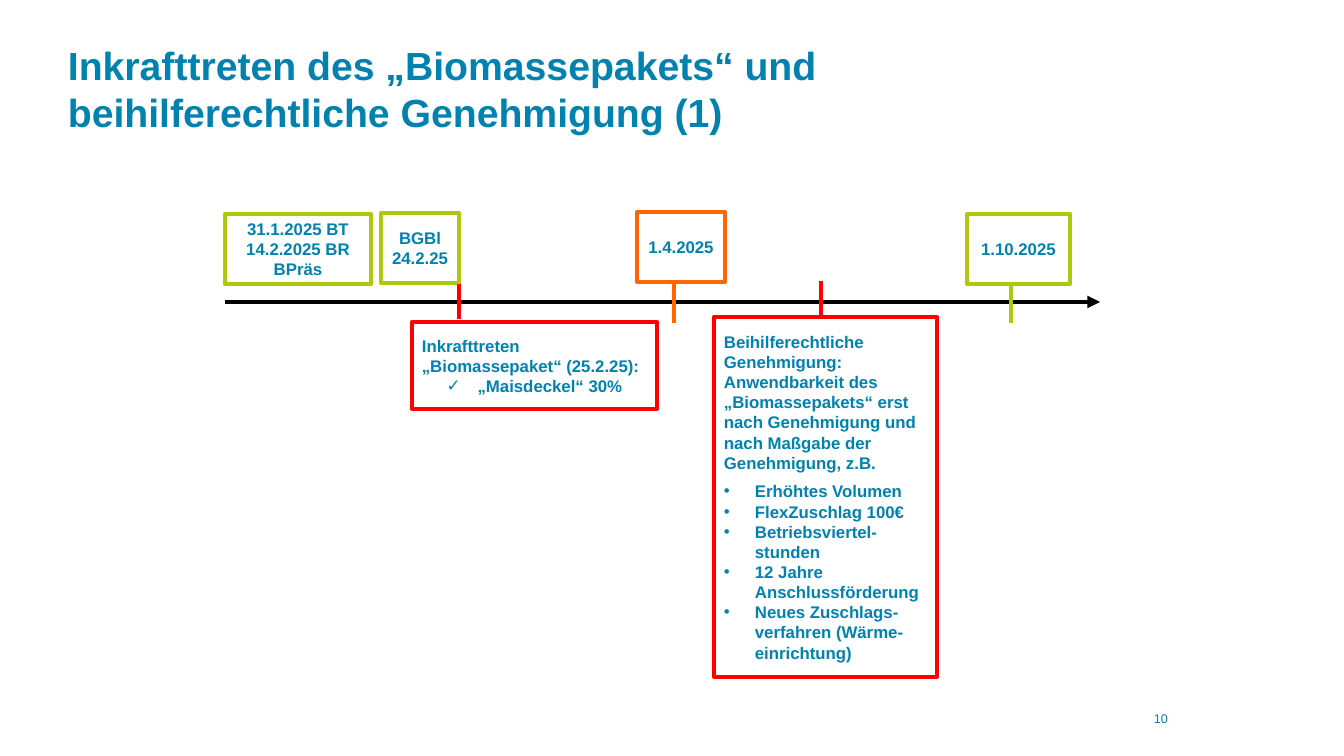
from lxml import etree
from pptx import Presentation, util as u
from pptx.dml.color import RGBColor
from pptx.enum import shapes, text
from pptx.oxml.ns import qn

EMU_PER_PX = 914400 / 100.8
BLUE, GREEN, ORANGE, RED, BLACK = "0082B0", "AEC90B", "FF6600", "FF0000", "000000"
LEFT, CENTER = text.PP_ALIGN.LEFT, text.PP_ALIGN.CENTER


def px(length):
    return u.Emu(round(length * EMU_PER_PX))


def color(value):
    return RGBColor.from_string(value)


def add_bullet(paragraph, character):
    properties = paragraph._p.get_or_add_pPr()
    properties.set("marL", str(px(31)))
    properties.set("indent", str(px(-31)))
    font = etree.SubElement(properties, qn("a:buFont"))
    font.set("typeface", "Arial")
    etree.SubElement(properties, qn("a:buChar")).set("char", character)


def write(shape, lines, size, bold=True, anchor=text.MSO_ANCHOR.MIDDLE):
    """Fill a shape with lines given as (wording, alignment, bullet, space before)."""
    frame = shape.text_frame
    frame.word_wrap = True
    frame.vertical_anchor = anchor
    for index, (wording, alignment, bullet, space) in enumerate(lines):
        paragraph = frame.add_paragraph() if index else frame.paragraphs[0]
        paragraph.alignment = alignment
        if space:
            paragraph.space_before = u.Pt(space)
        if bullet:
            add_bullet(paragraph, bullet)
        run = paragraph.add_run()
        run.text = wording
        run.font.name = "Arial"
        run.font.size = u.Pt(size)
        run.font.bold = bold
        run.font.color.rgb = color(BLUE)


def add_label(slide, box, lines, size, **style):
    write(slide.shapes.add_textbox(*map(px, box)), lines, size, **style)


def add_event(slide, box, outline, lines):
    shape = slide.shapes.add_shape(shapes.MSO_SHAPE.RECTANGLE, *map(px, box))
    shape.shadow.inherit = False
    shape.fill.background()
    shape.line.color.rgb = color(outline)
    shape.line.width = u.Pt(3)
    etree.SubElement(shape.line._get_or_add_ln(), qn("a:round"))
    write(shape, lines, 12)


def add_line(slide, start, end, stroke, arrow=False):
    line = slide.shapes.add_connector(
        shapes.MSO_CONNECTOR.STRAIGHT, *map(px, start + end))
    line.line.color.rgb = color(stroke)
    line.line.width = u.Pt(3)
    if arrow:
        etree.SubElement(line.line._get_or_add_ln(), qn("a:tailEnd")).set("type", "triangle")
    etree.SubElement(line._element.spPr, qn("a:effectLst"))


def add_timeline(slide, box):
    """Place axis, ticks and events relative to the box, whose top edge holds the dates."""
    left, top, width, height = box
    axis = top + 90
    add_line(slide, (left, axis), (left + width, axis), BLACK, arrow=True)

    dates = [
        (0, 2, 146, GREEN, ["31.1.2025 BT", "14.2.2025 BR", "BPräs"]),
        (156, 1, 78, GREEN, ["BGBl 24.2.25"]),
        (412, 0, 88, ORANGE, ["1.4.2025"]),
        (742, 2, 103, GREEN, ["1.10.2025"]),
    ]
    for x, y, date_width, outline, wording in dates:
        add_event(slide, (left + x, top + y, date_width, 70), outline,
                  [(line, CENTER, None, 0) for line in wording])

    add_event(slide, (left + 187, top + 110, 245, 87), RED, [
        ("Inkrafttreten „Biomassepaket“ (25.2.25):", LEFT, None, 0),
        ("„Maisdeckel“ 30%", CENTER, "✓", 0),
    ])

    approvals = ["Erhöhtes Volumen", "FlexZuschlag 100€", "Betriebsviertel-stunden",
                 "12 Jahre Anschlussförderung",
                 "Neues Zuschlags-verfahren (Wärme-einrichtung)"]
    add_event(slide, (left + 489, top + 105, 223, height - 105), RED, [
        ("Beihilferechtliche Genehmigung:", LEFT, None, 0),
        ("Anwendbarkeit des „Biomassepakets“ erst nach Genehmigung und "
         "nach Maßgabe der Genehmigung, z.B.", LEFT, None, 0),
    ] + [(wording, LEFT, "•", 0 if index else 6) for index, wording in enumerate(approvals)])

    ticks = [(234, 72, 107, RED), (596, 69, 104, RED),
             (449, 70, 111, ORANGE), (786, 74, 111, GREEN)]
    for x, start, end, stroke in ticks:
        add_line(slide, (left + x, top + start), (left + x, top + end), stroke)


def main():
    presentation = Presentation()
    presentation.slide_width, presentation.slide_height = px(1344), px(756)
    slide = presentation.slides.add_slide(presentation.slide_layouts[6])
    add_label(slide, (58, 25, 868, 126), [
        ("Inkrafttreten des „Biomassepakets“ und beihilferechtliche Genehmigung (1)",
         LEFT, None, 0)], 28)
    add_timeline(slide, (225, 212, 875, 465))
    add_label(slide, (1021, 706, 280, 50), [("10", CENTER, None, 0)], 9,
              bold=False, anchor=text.MSO_ANCHOR.TOP)
    presentation.save("out.pptx")


if __name__ == "__main__":
    main()
